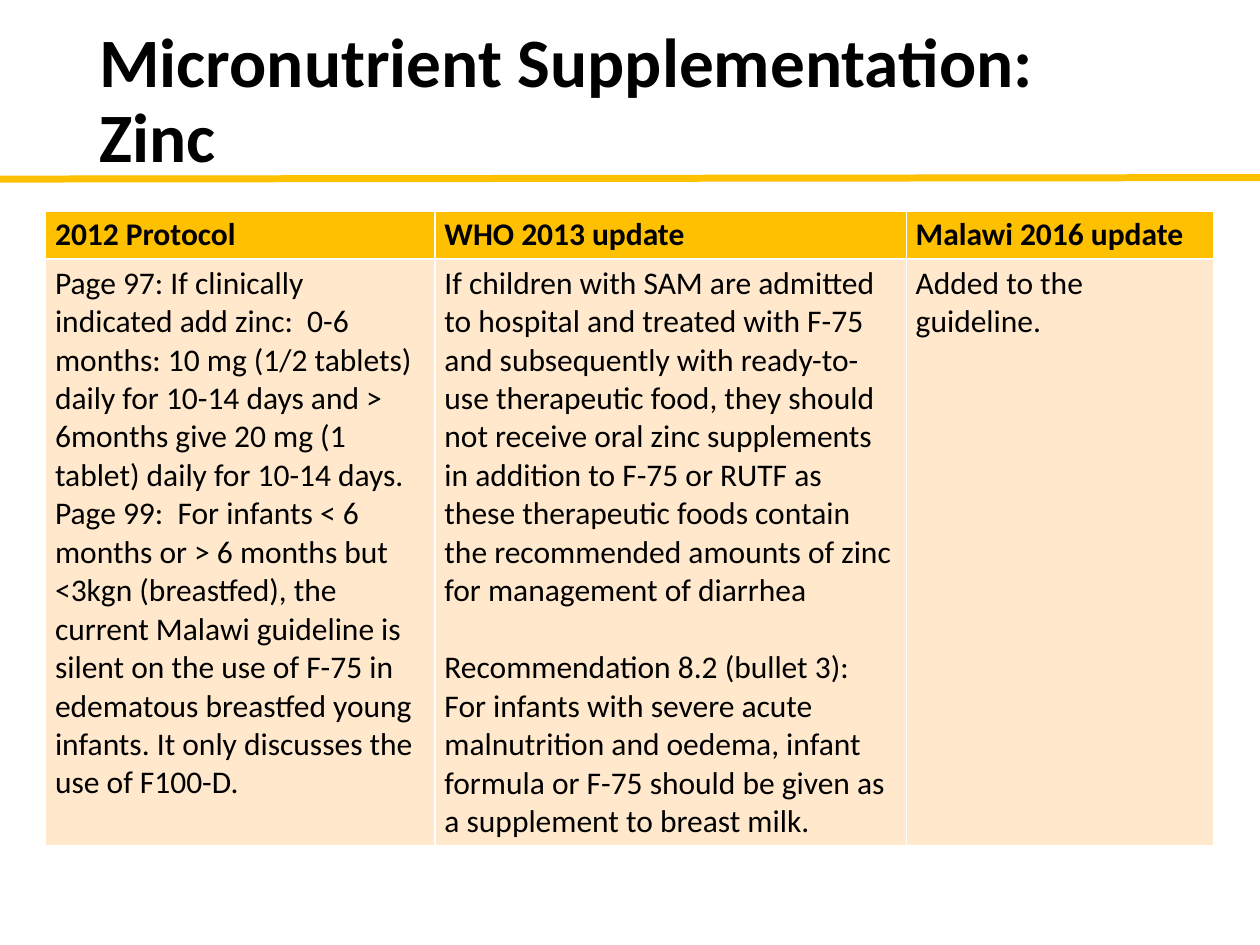
from lxml.etree import SubElement
from pptx import Presentation
from pptx.dml.color import RGBColor
from pptx.enum.shapes import MSO_CONNECTOR
from pptx.enum.text import MSO_ANCHOR, MSO_AUTO_SIZE, PP_ALIGN
from pptx.oxml.ns import qn
from pptx.util import Cm, Pt

TITLE = "Micronutrient Supplementation: \vZinc"
HEADERS = ["2012 Protocol", "WHO 2013 update", "Malawi 2016 update"]
BODY = [
    ["Page 97: If clinically indicated add zinc:  0-6 months: 10 mg (1/2 tablets) "
     "daily for 10-14 days and > 6months give 20 mg (1 tablet) daily for 10-14 days. "
     "Page 99:  For infants < 6 months or > 6 months but <3kgn (breastfed), the "
     "current Malawi guideline is silent on the use of F-75 in edematous breastfed "
     "young infants. It only discusses the use of F100-D."],
    ["If children with SAM are admitted to hospital and treated with F-75 and "
     "subsequently with ready-to-use therapeutic food, they should not receive oral "
     "zinc supplements in addition to F-75 or RUTF as these therapeutic foods contain "
     "the recommended amounts of zinc for management of diarrhea",
     "Recommendation 8.2 (bullet 3):",
     "For infants with severe acute malnutrition and oedema, infant formula or F-75 "
     "should be given as a supplement to breast milk."],
    ["Added to the guideline."],
]
COLUMN_WIDTHS = [7.85, 9.5, 6.2]
ROW_HEIGHTS = [0.91, 11.76]
GOLD, CREAM, BLACK = "FFC000", "FFE8CC", "000000"


def color(hex_code):
    return RGBColor.from_string(hex_code)


def format_text(text_frame, size, bold):
    for paragraph in text_frame.paragraphs:
        for run in paragraph.runs:
            run.font.name = "Calibri"
            run.font.size = Pt(size)
            run.font.bold = bold
            run.font.color.rgb = color(BLACK)


def add_title(slide):
    title = slide.shapes.title
    title.left, title.top, title.width, title.height = Cm(1.75), Cm(1.02), Cm(21.9), Cm(2.1)
    text_frame = title.text_frame
    text_frame.text = TITLE
    text_frame.word_wrap = True
    text_frame.auto_size = MSO_AUTO_SIZE.NONE
    text_frame.vertical_anchor = MSO_ANCHOR.MIDDLE
    paragraph = text_frame.paragraphs[0]
    paragraph.alignment = PP_ALIGN.LEFT
    paragraph.line_spacing = 0.9
    format_text(text_frame, 39.6, True)


def add_rule(slide):
    rule = slide.shapes.add_connector(
        MSO_CONNECTOR.STRAIGHT, Cm(0), Cm(3.61), Cm(25.4), Cm(3.58))
    rule.line.color.rgb = color(GOLD)
    rule.line.width = Pt(4)
    SubElement(rule._element.spPr, qn("a:effectLst"))


def add_comparison(slide):
    table = slide.shapes.add_table(
        len(ROW_HEIGHTS), len(COLUMN_WIDTHS), Cm(0.92), Cm(4.25),
        Cm(sum(COLUMN_WIDTHS)), Cm(sum(ROW_HEIGHTS))).table
    for row, height in zip(table.rows, ROW_HEIGHTS):
        row.height = Cm(height)
    for column, width in zip(table.columns, COLUMN_WIDTHS):
        column.width = Cm(width)
    rows = [[[header] for header in HEADERS], BODY]
    for row_index, row in enumerate(rows):
        is_header = row_index == 0
        for column_index, paragraphs in enumerate(row):
            cell = table.cell(row_index, column_index)
            cell.margin_left = cell.margin_right = Cm(0.19)
            cell.margin_top = cell.margin_bottom = Cm(0.1)
            cell.fill.solid()
            cell.fill.fore_color.rgb = color(GOLD if is_header else CREAM)
            cell.text_frame.text = "\n".join(paragraphs)
            format_text(cell.text_frame, 18, is_header)
    recommendation = table.cell(1, 1).text_frame.paragraphs[1]
    recommendation.space_before = Pt(22)


def main():
    presentation = Presentation()
    presentation.slide_width, presentation.slide_height = Cm(25.4), Cm(19.05)
    slide = presentation.slides.add_slide(presentation.slide_layouts[5])
    add_rule(slide)
    add_title(slide)
    add_comparison(slide)
    presentation.save("out.pptx")


if __name__ == "__main__":
    main()
